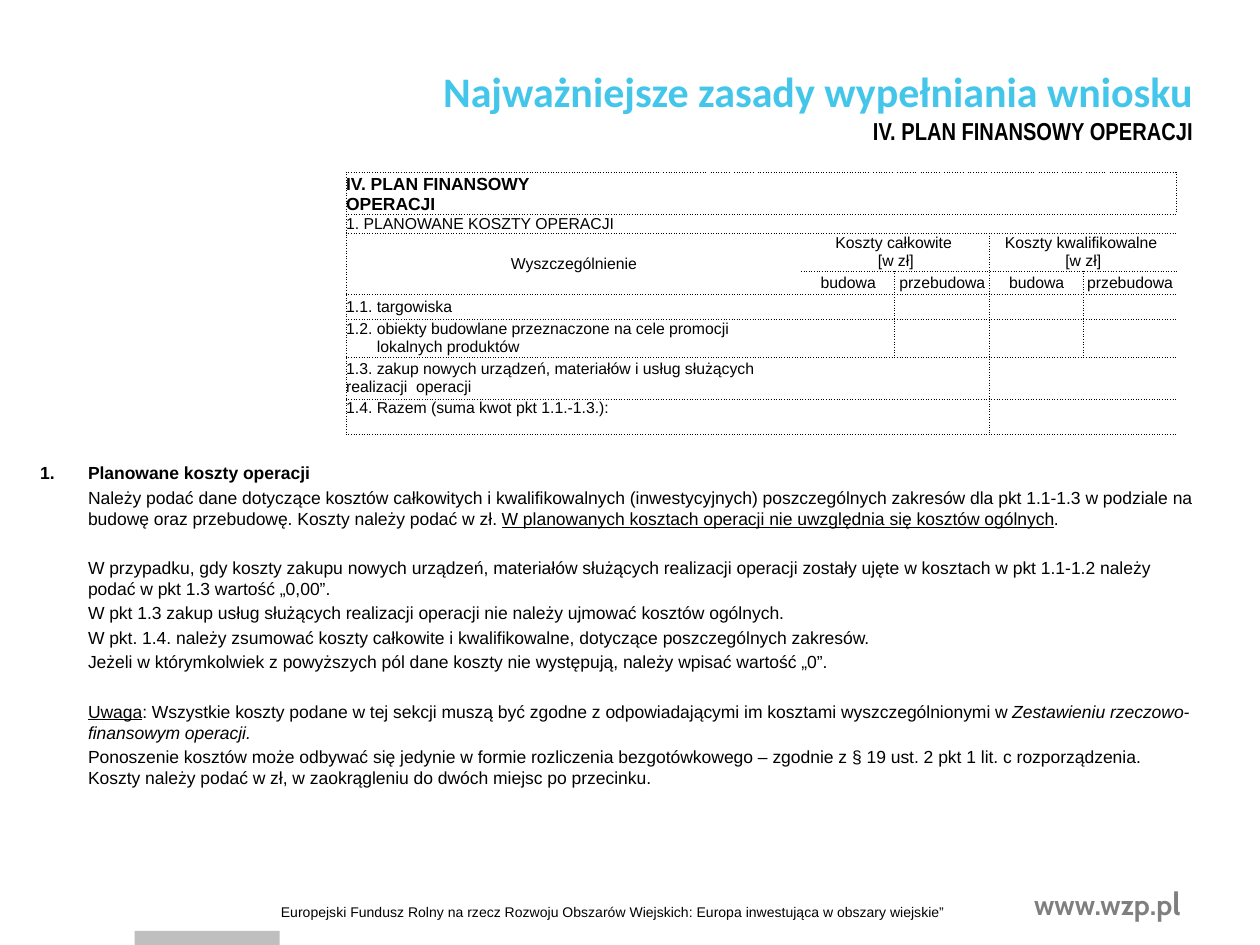
from dataclasses import dataclass

import pptx
import pptx.dml.color
import pptx.enum.shapes
import pptx.enum.text
import pptx.oxml
import pptx.oxml.ns
import pptx.util

Pt = pptx.util.Pt
ALIGN = pptx.enum.text.PP_ALIGN
ANCHOR = pptx.enum.text.MSO_ANCHOR


@dataclass(frozen=True)
class Theme:
    black: str = "000000"
    white: str = "FFFFFF"
    cyan: str = "44C6EB"
    bar_gray: str = "BFBFBF"
    web_gray: str = "7F7F7F"
    font: str = "Arial"
    title_size: float = 24
    subtitle_size: float = 14
    body_size: float = 10
    table_size: float = 9
    footer_size: float = 8
    web_size: float = 16


THEME = Theme()
COLUMN_WIDTHS = [154] + [13.3] * 12 + [13.6] * 4 + [13.4] * 4 + [13.3] * 4
ROW_HEIGHTS = [22.3, 10.3, 20, 13.1, 14.3, 20.5, 24, 20.2]
LABEL_COLUMNS = 9
HANGING = 17.6
BODY_INDENT = 27.4
GAP = 2
BLOCK_GAP = 16

COST_ROWS = [
    ("1.1. targowiska", 4, {}),
    ("1.2. obiekty budowlane przeznaczone na cele promocji\nlokalnych produktów", 4,
     {"left": HANGING, "first": -HANGING}),
    ("1.3. zakup nowych urządzeń, materiałów i usług służących realizacji  operacji", 8, {}),
    ("1.4. Razem (suma kwot pkt 1.1.-1.3.):", 8, {"anchor": ANCHOR.TOP}),
]

BODY = [
    (GAP, [("Należy podać dane dotyczące kosztów całkowitych i kwalifikowalnych (inwestycyjnych) "
            "poszczególnych zakresów dla pkt 1.1-1.3 w podziale na budowę oraz przebudowę. "
            "Koszty należy podać w zł. ", {}),
           ("W planowanych kosztach operacji nie uwzględnia się kosztów ogólnych", {"underline": True}),
           (".", {})]),
    (BLOCK_GAP, "W przypadku, gdy koszty zakupu nowych urządzeń, materiałów służących realizacji "
                "operacji zostały ujęte w kosztach w pkt 1.1-1.2 należy podać w pkt 1.3 wartość „0,00”."),
    (GAP, "W pkt 1.3 zakup usług służących realizacji operacji nie należy ujmować kosztów ogólnych."),
    (GAP, "W pkt. 1.4. należy zsumować koszty całkowite i kwalifikowalne, dotyczące "
          "poszczególnych zakresów."),
    (GAP, "Jeżeli w którymkolwiek z powyższych pól dane koszty nie występują, "
          "należy wpisać wartość „0”."),
    (BLOCK_GAP, [("Uwaga", {"underline": True}),
                 (": Wszystkie koszty podane w tej sekcji muszą być zgodne z odpowiadającymi im "
                  "kosztami wyszczególnionymi w ", {}),
                 ("Zestawieniu rzeczowo-finansowym operacji.", {"italic": True})]),
    (GAP, "Ponoszenie kosztów może odbywać się jedynie w formie rozliczenia bezgotówkowego – zgodnie "
          "z § 19 ust. 2 pkt 1 lit. c rozporządzenia. Koszty należy podać w zł, w zaokrągleniu "
          "do dwóch miejsc po przecinku."),
]


def color(value):
    return pptx.dml.color.RGBColor.from_string(value)


def write(frame, text, new=False, align=ALIGN.LEFT, before=0, left=0, first=0, numbered=False, **style):
    """Write one paragraph; text is a string or a list of (text, style) runs."""
    paragraph = frame.add_paragraph() if new else frame.paragraphs[0]
    paragraph.alignment = align
    paragraph.space_before = Pt(before)
    properties = paragraph._p.get_or_add_pPr()
    properties.set("marL", str(Pt(left)))
    properties.set("indent", str(Pt(first)))
    if numbered:
        pptx.oxml.ns.qn("a:buAutoNum")
        namespace = pptx.oxml.ns.nsdecls("a")
        properties.append(pptx.oxml.parse_xml(f'<a:buAutoNum {namespace} type="arabicPeriod"/>'))
    runs = [(text, {})] if isinstance(text, str) else text
    for run_text, run_style in runs:
        for index, line in enumerate(run_text.split("\n")):
            if index:
                paragraph.add_line_break()
            run = paragraph.add_run()
            run.text = line
            format_font(run.font, **{**style, **run_style})


def format_font(font, size=THEME.body_size, name=THEME.font, fill=THEME.black,
                bold=False, italic=False, underline=False):
    font.size, font.name = Pt(size), name
    font.bold, font.italic, font.underline = bold, italic, underline
    font.color.rgb = color(fill)


def add_text_box(slide, left, top, width, height):
    frame = slide.shapes.add_textbox(Pt(left), Pt(top), Pt(width), Pt(height)).text_frame
    frame.word_wrap = True
    return frame


def add_title(slide):
    title = slide.shapes.title
    title.left, title.top, title.width, title.height = Pt(226.8), Pt(34), Pt(462.2), Pt(53.3)
    frame = title.text_frame
    frame.auto_size = pptx.enum.text.MSO_AUTO_SIZE.NONE
    frame.vertical_anchor = ANCHOR.TOP
    write(frame, "Najważniejsze zasady wypełniania wniosku", align=ALIGN.RIGHT,
          size=THEME.title_size, name="Calibri", fill=THEME.cyan, bold=True)
    write(frame, "IV. PLAN FINANSOWY OPERACJI", new=True, align=ALIGN.RIGHT,
          size=THEME.subtitle_size, name="Arial Narrow", bold=True)


def add_border(cell, side):
    cell._tc.get_or_add_tcPr().append(pptx.oxml.parse_xml(
        f'<a:ln{side} {pptx.oxml.ns.nsdecls("a")} w="{Pt(0.5)}"><a:solidFill>'
        f'<a:srgbClr val="{THEME.black}"/></a:solidFill><a:prstDash val="sysDot"/></a:ln{side}>'))


def fill_block(table, row, column, columns, text="", rows=1, merge=True, anchor=ANCHOR.MIDDLE,
               size=THEME.table_size, **style):
    """Outline a block of cells, merge it if asked, and write its text in the first cell."""
    last_row, last_column = row + rows - 1, column + columns - 1
    for r in range(row, last_row + 1):
        for c in range(column, last_column + 1):
            cell = table.cell(r, c)
            cell.margin_left = cell.margin_right = cell.margin_top = cell.margin_bottom = 0
            edges = {"L": c == column, "R": c == last_column, "T": r == row, "B": r == last_row}
            for side, outer in edges.items():
                if outer:
                    add_border(cell, side)
            cell.fill.solid()
            cell.fill.fore_color.rgb = color(THEME.white)
            end = cell.text_frame.paragraphs[0]._p.get_or_add_endParaRPr()
            end.set("sz", str(int(THEME.footer_size * 100)))
    first_cell = table.cell(row, column)
    if merge:
        first_cell.merge(table.cell(last_row, last_column))
    first_cell.vertical_anchor = anchor
    if text:
        write(first_cell.text_frame, text, size=size, **style)


def add_cost_table(slide):
    column_count = len(COLUMN_WIDTHS)
    table = slide.shapes.add_table(len(ROW_HEIGHTS), column_count, Pt(197.8), Pt(98.4),
                                   Pt(sum(COLUMN_WIDTHS)), Pt(sum(ROW_HEIGHTS))).table
    table.first_row = table.horz_banding = False
    for column, width in zip(table.columns, COLUMN_WIDTHS):
        column.width = Pt(width)
    for row, height in zip(table.rows, ROW_HEIGHTS):
        row.height = Pt(height)

    fill_block(table, 0, 0, column_count, "IV. PLAN FINANSOWY OPERACJI", merge=False,
               anchor=ANCHOR.BOTTOM, size=THEME.body_size, bold=True)
    fill_block(table, 1, 0, column_count, "1. PLANOWANE KOSZTY OPERACJI", anchor=ANCHOR.BOTTOM)
    fill_block(table, 2, 0, LABEL_COLUMNS, "Wyszczególnienie", rows=2, align=ALIGN.CENTER)
    for group, kind in enumerate(["całkowite", "kwalifikowalne"]):
        start = LABEL_COLUMNS + 8 * group
        fill_block(table, 2, start, 8, f"Koszty {kind} \n[w zł]", align=ALIGN.CENTER)
        fill_block(table, 3, start, 4, "budowa", align=ALIGN.CENTER)
        fill_block(table, 3, start + 4, 4, "przebudowa", align=ALIGN.CENTER)
    for row, (label, span, style) in enumerate(COST_ROWS, start=4):
        fill_block(table, row, 0, LABEL_COLUMNS, label, **style)
        for column in range(LABEL_COLUMNS, column_count, span):
            fill_block(table, row, column, span)


def add_body(slide):
    frame = add_text_box(slide, 15.8, 260.6, 673.2, 125.3)
    write(frame, "Planowane koszty operacji", left=BODY_INDENT, first=-BODY_INDENT,
          numbered=True, bold=True)
    for before, text in BODY:
        write(frame, text, new=True, before=before, left=BODY_INDENT)


def add_footer(slide):
    bar = slide.shapes.add_shape(pptx.enum.shapes.MSO_SHAPE.RECTANGLE, Pt(77), Pt(532), Pt(82.8), Pt(8))
    bar.shadow.inherit = False
    bar.fill.solid()
    bar.fill.fore_color.rgb = color(THEME.bar_gray)
    bar.line.fill.background()
    write(add_text_box(slide, 583.9, 501.8, 107.3, 28.8),
          [("www.wzp.p", {}), ("l", {"size": THEME.subtitle_size + 4})],
          size=THEME.web_size, name="Cabin", fill=THEME.web_gray, bold=True)
    write(add_text_box(slide, 153.4, 512.6, 509.8, 17.3),
          "Europejski Fundusz Rolny na rzecz Rozwoju Obszarów Wiejskich: "
          "Europa inwestująca w obszary wiejskie”", size=THEME.footer_size)


def main():
    presentation = pptx.Presentation()
    presentation.slide_width, presentation.slide_height = Pt(720), Pt(540)
    slide = presentation.slides.add_slide(presentation.slide_layouts[5])
    add_footer(slide)
    add_title(slide)
    add_body(slide)
    add_cost_table(slide)
    presentation.save("out.pptx")


if __name__ == "__main__":
    main()
